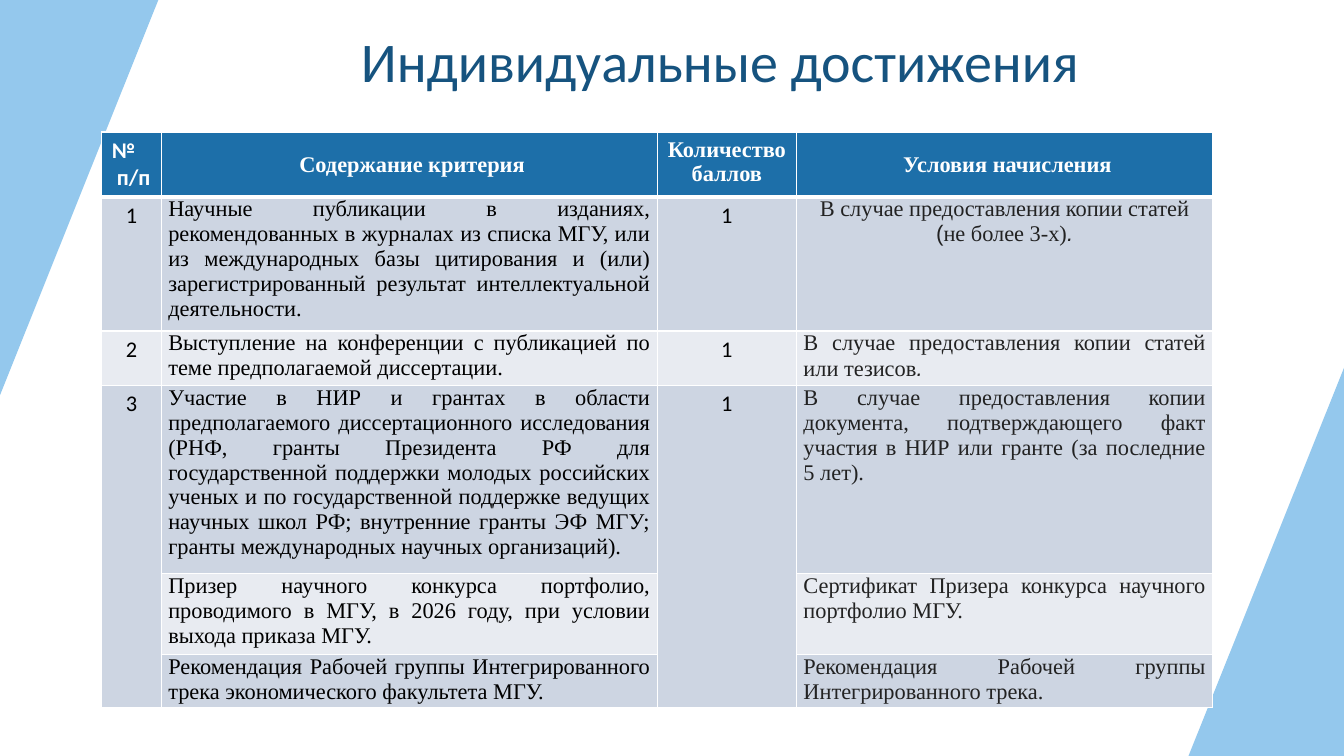
from dataclasses import dataclass

from lxml.etree import SubElement
from pptx import Presentation
from pptx.dml.color import RGBColor
from pptx.enum.shapes import MSO_SHAPE as Preset
from pptx.enum.text import MSO_ANCHOR as Anchor, MSO_AUTO_SIZE as AutoSize, PP_ALIGN as Align
from pptx.oxml.ns import qn
from pptx.util import Emu, Pt

EMU_PER_PX = 9144
COLORS = {
    "white": "FFFFFF",
    "black": "000000",
    "grey": "222222",
    "sky": "94C8ED",
    "navy": "16537F",
    "header": "1D6FA9",
    "odd": "CDD5E2",
    "even": "E8EBF1",
}
SANS, SERIF, ARIAL = "Calibri", "Times New Roman", "Arial"
COLUMN_WIDTHS = (59, 492, 138, 413)
ROW_HEIGHTS = (63, 133, 54, 187, 80, 53)
MERGED_COLUMNS = (0, 2)
MERGED_ROWS = (3, 5)
NARROW = {"margin_left": 7, "margin_right": 7, "margin_top": 0, "margin_bottom": 0}


@dataclass(frozen=True)
class Corner:
    left: int
    top: int
    rotation: int


@dataclass(frozen=True)
class Part:
    text: str
    name: str = SERIF
    italic: bool = False


@dataclass(frozen=True)
class Entry:
    paragraphs: tuple[tuple[Part, ...], ...]
    color: str
    alignment: Align = Align.JUSTIFY
    bold: bool = False
    narrow: bool = True
    middle: bool = False


def heading(text: str) -> Entry:
    return Entry(((Part(text),),), "white", Align.CENTER, bold=True, middle=True)


def number(text: str) -> Entry:
    return Entry(((Part(text, SANS),),), "black", Align.CENTER, narrow=False)


def criterion(text: str) -> Entry:
    return Entry(((Part(text),),), "black")


def condition(*parts: Part, alignment: Align = Align.JUSTIFY) -> Entry:
    return Entry((parts,), "grey", alignment)


CORNERS = (Corner(1176, 365, 0), Corner(0, 0, 180))
FULL_STOP = Part(".", ARIAL, True)
ROWS: tuple[tuple[Entry | None, ...], ...] = (
    (
        Entry(((Part("№", SANS),), (Part(" п/п", SANS),)), "white", Align.LEFT, True, False),
        heading(" Содержание критерия"),
        Entry(((Part("Количество баллов"),),), "white", Align.CENTER, True, False),
        heading(" Условия начисления"),
    ),
    (
        number("1"),
        criterion("Научные публикации в изданиях, рекомендованных в журналах из списка МГУ, "
                  "или из международных базы цитирования и (или) зарегистрированный результат "
                  "интеллектуальной деятельности."),
        number("1"),
        condition(Part("В случае предоставления копии статей "), Part("(", ARIAL),
                  Part("не более 3-х)"), FULL_STOP, alignment=Align.CENTER),
    ),
    (
        number("2"),
        criterion("Выступление на конференции с публикацией по теме предполагаемой диссертации."),
        number("1"),
        condition(Part("В случае предоставления копии статей или тезисов"), FULL_STOP),
    ),
    (
        number("3"),
        criterion("Участие в НИР и грантах в области предполагаемого диссертационного "
                  "исследования (РНФ, гранты Президента РФ для государственной поддержки молодых "
                  "российских ученых и по государственной поддержке ведущих научных школ РФ; "
                  "внутренние гранты ЭФ МГУ; гранты международных научных организаций)."),
        number("1"),
        condition(Part("В случае предоставления копии документа, подтверждающего факт участия "
                       "в НИР или гранте (за последние 5 лет).")),
    ),
    (
        None,
        criterion("Призер научного конкурса портфолио, проводимого в МГУ, в 2026 году, при "
                  "условии выхода приказа МГУ."),
        None,
        condition(Part("Сертификат Призера конкурса научного портфолио МГУ.")),
    ),
    (
        None,
        criterion("Рекомендация Рабочей группы Интегрированного трека экономического "
                  "факультета МГУ."),
        None,
        condition(Part("Рекомендация Рабочей группы Интегрированного трека.")),
    ),
)


def px(length: int) -> Emu:
    return Emu(length * EMU_PER_PX)


def rgb(color: str) -> RGBColor:
    return RGBColor.from_string(COLORS[color])


def apply_format(target, values: dict) -> None:
    for attribute, value in values.items():
        setattr(target, attribute, value)


def add_corner(slide, corner: Corner) -> None:
    shape = slide.shapes.add_shape(Preset.ISOSCELES_TRIANGLE, px(corner.left), px(corner.top),
                                   px(157), px(392))
    shape.adjustments[0] = 1
    shape.rotation = corner.rotation
    shape.shadow.inherit = False
    shape.fill.solid()
    shape.fill.fore_color.rgb = rgb("sky")
    shape.line.fill.background()


def format_title(title) -> None:
    apply_format(title, {"left": px(125), "top": px(21), "width": px(1178), "height": px(77)})
    frame = title.text_frame
    frame.text = "Индивидуальные достижения"
    apply_format(frame, {"auto_size": AutoSize.NONE, "word_wrap": True,
                         "vertical_anchor": Anchor.MIDDLE})
    paragraph = frame.paragraphs[0]
    paragraph.alignment = Align.CENTER
    font = paragraph.runs[0].font
    apply_format(font, {"name": SANS, "size": Pt(40), "bold": False})
    font.color.rgb = rgb("navy")


def style_cell(cell, row: int) -> None:
    properties = cell._tc.get_or_add_tcPr()
    widths = {"L": 1, "R": 1, "T": 3 if row == 1 else 1, "B": 3 if row == 0 else 1}
    for side, width in widths.items():
        line = SubElement(properties, qn(f"a:ln{side}"), w=str(Pt(width)))
        fill = SubElement(line, qn("a:solidFill"))
        SubElement(fill, qn("a:srgbClr"), val=COLORS["white"])
    cell.fill.solid()
    cell.fill.fore_color.rgb = rgb("header" if row == 0 else "odd" if row % 2 else "even")


def write_cell(cell, entry: Entry) -> None:
    if entry.narrow:
        apply_format(cell, {side: px(margin) for side, margin in NARROW.items()})
    cell.vertical_anchor = Anchor.MIDDLE if entry.middle else Anchor.TOP
    frame = cell.text_frame
    for index, parts in enumerate(entry.paragraphs):
        paragraph = frame.add_paragraph() if index else frame.paragraphs[0]
        paragraph.alignment = entry.alignment
        for part in parts:
            run = paragraph.add_run()
            run.text = part.text
            apply_format(run.font, {"name": part.name, "size": Pt(16), "bold": entry.bold,
                                    "italic": part.italic})
            run.font.color.rgb = rgb(entry.color)


def add_criteria_table(slide) -> None:
    table = slide.shapes.add_table(len(ROWS), len(COLUMN_WIDTHS), px(101), px(131),
                                   px(sum(COLUMN_WIDTHS)), px(sum(ROW_HEIGHTS))).table
    for column, width in zip(table.columns, COLUMN_WIDTHS):
        column.width = px(width)
    for row, height in zip(table.rows, ROW_HEIGHTS):
        row.height = px(height)
    first, last = MERGED_ROWS
    for column in MERGED_COLUMNS:
        table.cell(first, column).merge(table.cell(last, column))
    for row, entries in enumerate(ROWS):
        for column, entry in enumerate(entries):
            cell = table.cell(row, column)
            style_cell(cell, row)
            if entry:
                write_cell(cell, entry)


def main() -> None:
    presentation = Presentation()
    apply_format(presentation, {"slide_width": px(1333), "slide_height": px(750)})
    slide = presentation.slides.add_slide(presentation.slide_layouts[5])
    for corner in CORNERS:
        add_corner(slide, corner)
    format_title(slide.shapes.title)
    add_criteria_table(slide)
    presentation.save("out.pptx")


if __name__ == "__main__":
    main()
